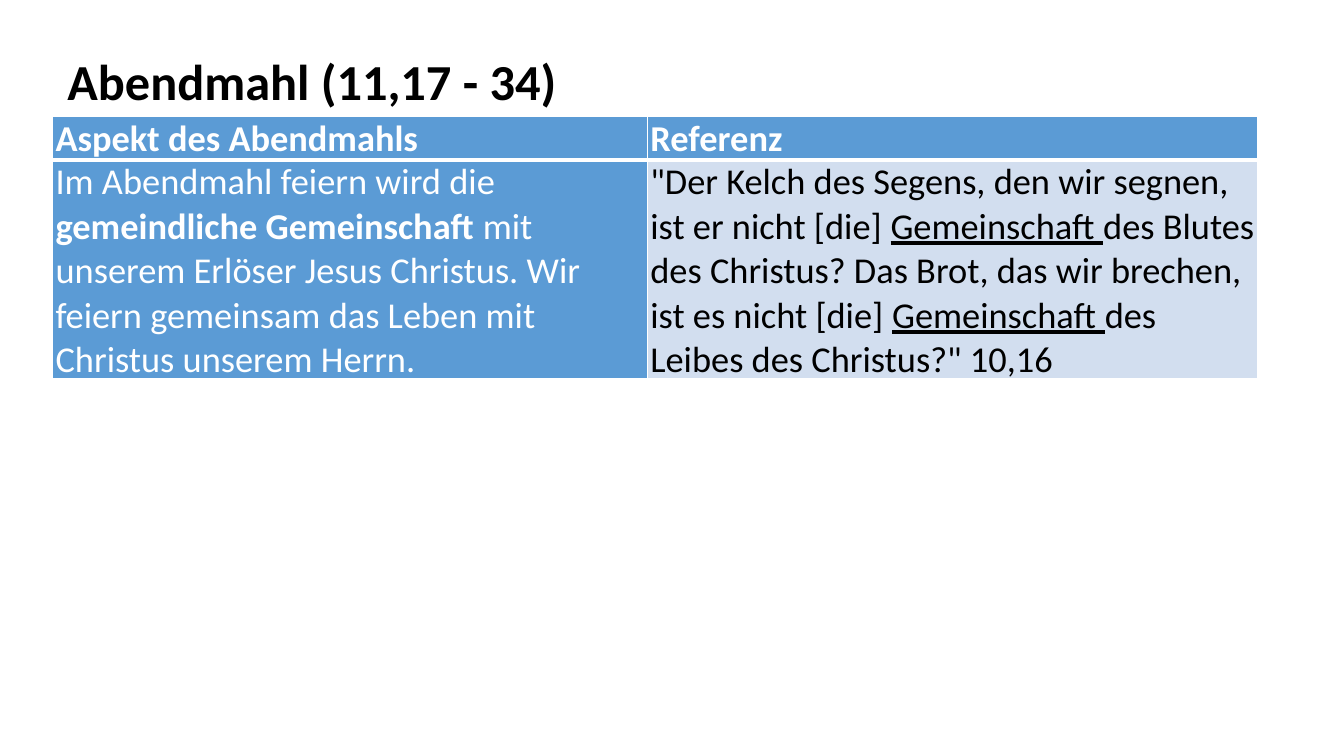
from lxml import etree
from pptx import Presentation
from pptx.dml.color import RGBColor
from pptx.oxml.ns import qn
from pptx.util import Cm, Pt

BLACK = RGBColor(0x00, 0x00, 0x00)
WHITE = RGBColor(0xFF, 0xFF, 0xFF)
BLUE = RGBColor(0x5B, 0x9B, 0xD5)
PALE_BLUE = RGBColor(0xD2, 0xDE, 0xEF)


def add_run(p, text, size=26, color=BLACK, bold=False, underline=False):
    r = p.add_run()
    r.text = text
    r.font.name = "Calibri"
    r.font.size = Pt(size)
    r.font.color.rgb = color
    r.font.bold = bold
    r.font.underline = underline


def add_border(cell, side, width):
    """Draw a white line, width in points, on side L, R, T or B of the cell."""
    ln = etree.SubElement(cell._tc.get_or_add_tcPr(), qn(f"a:ln{side}"), w=str(Pt(width)))
    fill = etree.SubElement(ln, qn("a:solidFill"))
    etree.SubElement(fill, qn("a:srgbClr"), val=str(WHITE))


prs = Presentation()
prs.slide_width, prs.slide_height = Cm(33.87), Cm(19.05)
s = prs.slides.add_slide(prs.slide_layouts[6])

title = s.shapes.add_textbox(Cm(1.45), Cm(1.14), Cm(12.98), Cm(1.8))
title.text_frame.word_wrap = False
add_run(title.text_frame.paragraphs[0], "Abendmahl (11,17 - 34)", size=36, bold=True)

header = dict(color=WHITE, bold=True)
rows = [
    [
        (BLUE, [("Aspekt des Abendmahls", header)]),
        (BLUE, [("Referenz", header)]),
    ],
    [
        (BLUE, [
            ("Im Abendmahl feiern wird die ", dict(color=WHITE)),
            ("gemeindliche Gemeinschaft ", dict(color=WHITE, bold=True)),
            ("mit unserem Erlöser Jesus Christus. Wir feiern gemeinsam "
             "das Leben mit Christus unserem Herrn.", dict(color=WHITE)),
        ]),
        (PALE_BLUE, [
            ('"Der Kelch des Segens, den wir segnen, ist er nicht [die] ', {}),
            ("Gemeinschaft ", dict(underline=True)),
            ("des Blutes des Christus? Das Brot, das wir brechen, "
             "ist es nicht [die] ", {}),
            ("Gemeinschaft ", dict(underline=True)),
            ('des Leibes des Christus?" 10,16', {}),
        ]),
    ],
]
col_widths = [Cm(14.99), Cm(15.39)]
row_heights = [Cm(1.1), Cm(5.5)]

table = s.shapes.add_table(2, 2, Cm(1.32), Cm(2.93), sum(col_widths), sum(row_heights)).table
for column, width in zip(table.columns, col_widths):
    column.width = width
for row, height in zip(table.rows, row_heights):
    row.height = height

for i, row in enumerate(rows):
    top, bottom = (1, 3) if i == 0 else (3, 1)
    for j, (fill, runs) in enumerate(row):
        cell = table.cell(i, j)
        cell.margin_left = cell.margin_right = Cm(0.08)
        cell.margin_top = cell.margin_bottom = 0
        for side, width in (("L", 1), ("R", 1), ("T", top), ("B", bottom)):
            add_border(cell, side, width)
        cell.fill.solid()
        cell.fill.fore_color.rgb = fill
        for text, style in runs:
            add_run(cell.text_frame.paragraphs[0], text, **style)

prs.save("out.pptx")
